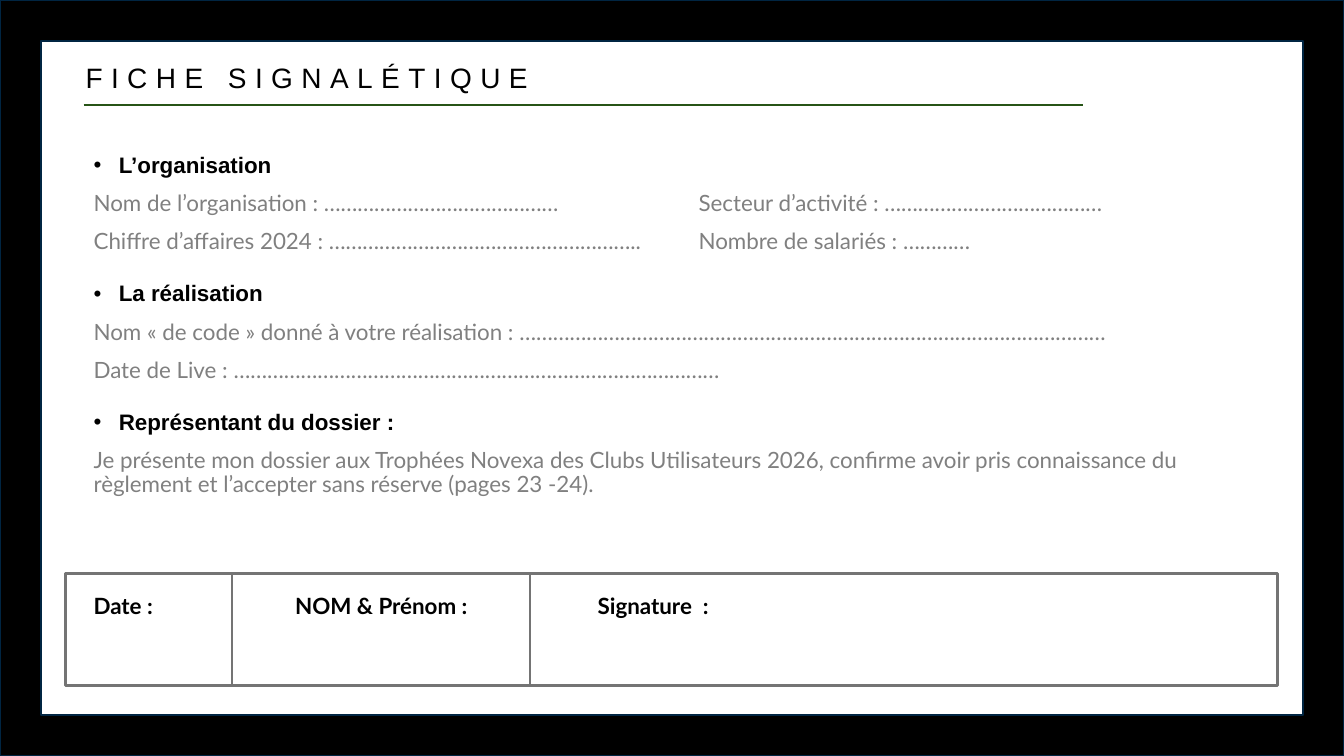
from dataclasses import dataclass

from lxml import etree
from pptx import Presentation
from pptx.dml.color import RGBColor
from pptx.enum.shapes import MSO_CONNECTOR, MSO_SHAPE
from pptx.oxml.ns import qn
from pptx.util import Inches, Pt

FRAME = MSO_SHAPE.FRAME
RECTANGLE = MSO_SHAPE.RECTANGLE
STRAIGHT = MSO_CONNECTOR.STRAIGHT


@dataclass(frozen=True)
class Theme:
    black: RGBColor = RGBColor(0x00, 0x00, 0x00)
    navy: RGBColor = RGBColor(0x00, 0x25, 0x42)
    green: RGBColor = RGBColor(0x27, 0x54, 0x17)
    text_gray: RGBColor = RGBColor(0x80, 0x80, 0x80)
    line_gray: RGBColor = RGBColor(0x74, 0x74, 0x74)
    heading_font: str = "Arial"
    body_font: str = "Lato"
    title_size: Pt = Pt(20)
    body_size: Pt = Pt(16)


THEME = Theme()
TITLE = {"name": THEME.heading_font, "size": THEME.title_size, "color": THEME.black}
HEADING = {"name": THEME.heading_font, "size": THEME.body_size, "color": THEME.black, "bold": True}
FIELD = {"name": THEME.body_font, "size": THEME.body_size, "color": THEME.text_gray, "bold": False}
LABEL = {"name": THEME.body_font, "size": THEME.body_size, "color": THEME.black, "bold": True}

SECTIONS = [
    ("L’organisation", [
        "Nom de l’organisation : ……………………………………\tSecteur d’activité : …………………………………",
        "Chiffre d’affaires 2024 : ………………………………………………..\tNombre de salariés : …………",
    ]),
    ("La réalisation", [
        "Nom «\u00a0de code\u00a0» donné à votre réalisation : "
        "……………………………………………………………………………………………",
        "Date de Live : ……………………………………………………………………………",
    ]),
    ("Représentant du dossier :", [
        "Je présente mon dossier aux Trophées Novexa des Clubs Utilisateurs 2026, "
        "confirme avoir pris connaissance du règlement et l’accepter sans réserve (pages 23 -24).",
    ]),
]
SIGNATURE_LABELS = ["Date :", "NOM & Prénom :", "Signature  :"]
SIGNATURE_TOP, SIGNATURE_HEIGHT = 5.69, 1.11


def add_outline(page, kind, left, top, width, height, line_color, weight, fill=None):
    shape = page.shapes.add_shape(kind, Inches(left), Inches(top), Inches(width), Inches(height))
    shape.shadow.inherit = False
    if fill is None:
        shape.fill.background()
    else:
        shape.fill.solid()
        shape.fill.fore_color.rgb = fill
    shape.line.color.rgb = line_color
    shape.line.width = Pt(weight)
    return shape


def add_rule(page, start, end, color):
    rule = page.shapes.add_connector(STRAIGHT, *(Inches(value) for value in (*start, *end)))
    rule.line.color.rgb = color
    rule.line.width = Pt(1.5)
    etree.SubElement(rule._element.spPr, qn("a:effectLst"))


def add_text_box(page, left, top, width, height):
    box = page.shapes.add_textbox(Inches(left), Inches(top), Inches(width), Inches(height))
    box.text_frame.word_wrap = True
    return box.text_frame


def add_bullet(para):
    properties = para._p.get_or_add_pPr()
    properties.set("marL", str(Inches(0.25)))
    properties.set("indent", str(Inches(-0.25)))
    etree.SubElement(properties, qn("a:buFont"), typeface=THEME.heading_font)
    etree.SubElement(properties, qn("a:buChar"), char="•")


def add_tabs(para, stops):
    tab_list = etree.SubElement(para._p.get_or_add_pPr(), qn("a:tabLst"))
    for stop in stops:
        etree.SubElement(tab_list, qn("a:tab"), pos=str(Inches(stop)), algn="l")


def write(para, text, style):
    span = para.add_run()
    span.text = text
    for name, value in style.items():
        if name == "color":
            span.font.color.rgb = value
        else:
            setattr(span.font, name, value)
    return span


def add_title(page):
    para = add_text_box(page, 0.75, 0.59, 7.6, 0.9).paragraphs[0]
    para.line_spacing = 0.9
    span = write(para, "FICHE SIGNALÉTIQUE", TITLE)
    span._r.get_or_add_rPr().set("spc", "600")
    add_rule(page, (0.83, 1.04), (10.74, 1.04), THEME.green)


def add_sections(page):
    frame = add_text_box(page, 0.83, 1.48, 11.85, 4.2)
    for index, (heading, fields) in enumerate(SECTIONS):
        para = frame.add_paragraph() if index else frame.paragraphs[0]
        para.line_spacing = 0.9
        para.space_before = Pt(20 if index else 0)
        add_bullet(para)
        write(para, heading, HEADING)
        for field in fields:
            para = frame.add_paragraph()
            para.line_spacing = 0.9
            para.space_before = Pt(10)
            if "\t" in field:
                add_tabs(para, [6])
            write(para, field, FIELD)


def add_signature_block(page):
    bottom = SIGNATURE_TOP + SIGNATURE_HEIGHT
    add_outline(page, RECTANGLE, 0.65, SIGNATURE_TOP, 12.02, SIGNATURE_HEIGHT, THEME.line_gray, 2.25)
    para = add_text_box(page, 0.83, 5.83, 11.84, 0.37).paragraphs[0]
    add_tabs(para, [2, 5])
    write(para, "\t".join(SIGNATURE_LABELS), LABEL)
    for left in (2.3, 5.26):
        add_rule(page, (left, SIGNATURE_TOP), (left, bottom), THEME.line_gray)


def main():
    deck = Presentation()
    deck.slide_width, deck.slide_height = Inches(13.33), Inches(7.5)
    page = deck.slides.add_slide(deck.slide_layouts[6])
    border = add_outline(page, FRAME, 0, 0, 13.33, 7.5, THEME.navy, 1.5, THEME.black)
    border.adjustments[0] = 0.054
    add_title(page)
    add_sections(page)
    add_signature_block(page)
    deck.save("out.pptx")


if __name__ == "__main__":
    main()
